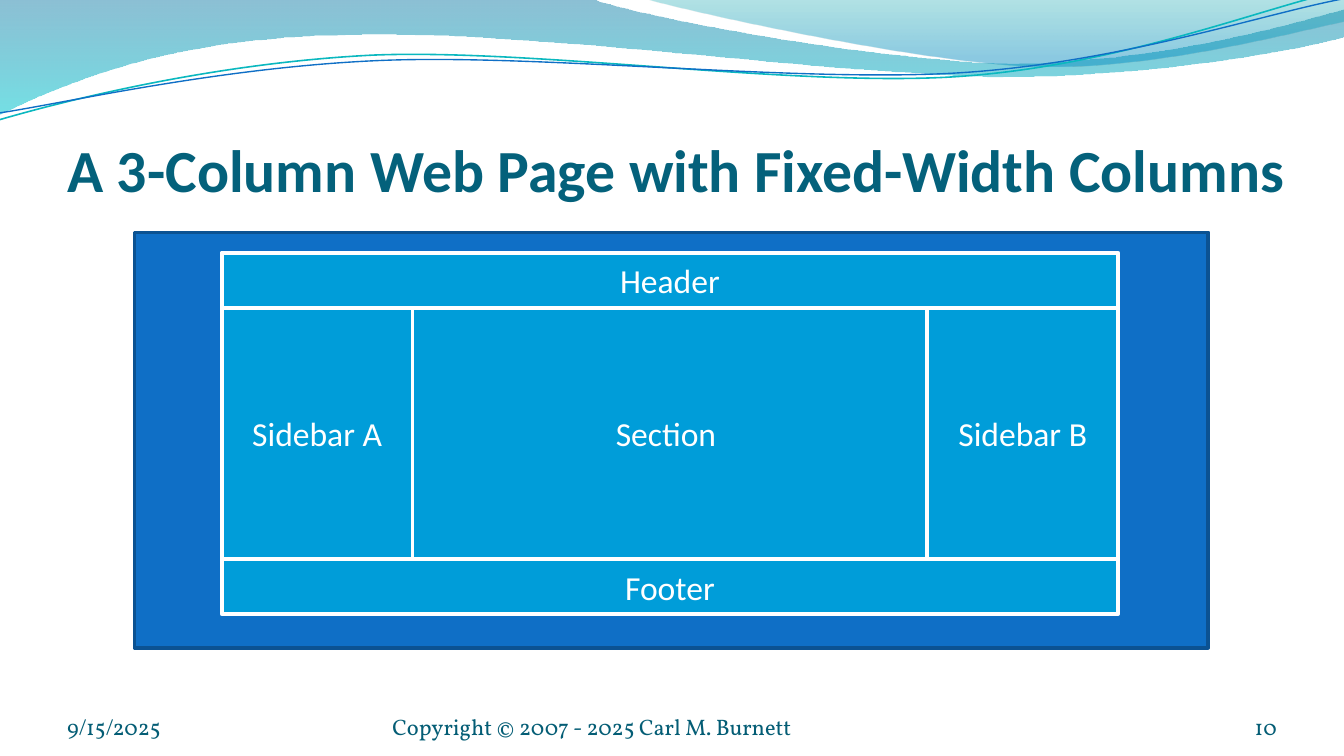
from itertools import accumulate
from math import cos, radians, sin

from pptx import Presentation
from pptx.dml.color import RGBColor
from pptx.enum.shapes import MSO_SHAPE
from pptx.enum.text import MSO_ANCHOR, PP_ALIGN
from pptx.oxml.ns import qn
from pptx.util import Inches, Pt

RECTANGLE = MSO_SHAPE.RECTANGLE
BOTTOM, MIDDLE = MSO_ANCHOR.BOTTOM, MSO_ANCHOR.MIDDLE
LEFT, CENTER, RIGHT = PP_ALIGN.LEFT, PP_ALIGN.CENTER, PP_ALIGN.RIGHT

COLORS = {
    "title": "04617B",
    "footer": "045D75",
    "page": "0F6FC6",
    "page_border": "0B5292",
    "block": "009DD9",
    "white": "FFFFFF",
    "deep_teal": "0074A1",
    "aqua": "00C6CF",
    "sea_green": "00A1A9",
    "sky": "008BBF",
    "teal_line": "0AB8BF",
}

LINE_TILT = 2.7
COLUMN_WIDTHS = (1.42, 3.83, 1.42)
ROW_HEIGHTS = (0.41, 1.87, 0.41)
GRID_LEFT, GRID_TOP = 1.65, 1.88
SECTION_OVERLAP = 0.06

WAVE_BANDS = (
    (
        [(0, 0), (4.4, -0.01), (4.76, 0.13, 6.64, 0.47, 7.58, 0.47),
         (8.53, 0.47, 9.58, 0.19, 10, 0.07), (10.01, 0.27),
         (9.83, 0.33, 8.7, 0.57, 7.46, 0.57),
         (6.22, 0.56, 3.82, 0.21, 2.57, 0.26),
         (1.29, 0.27, 0.46, 0.62, -0.01, 0.85), (0, 0)],
        [(0, "deep_teal", 45), (1, "aqua", 55)],
    ),
    (
        [(4.79, -0.01), (5.09, 0.08, 6.82, 0.46, 7.69, 0.49),
         (8.56, 0.52, 9.61, 0.24, 10, 0.16), (10, 0), (4.79, -0.01)],
        [(0, "sea_green", 30), (0.8, "sky", 45)],
    ),
)

WAVE_LINES = (
    ([(0, 0.89), (0.48, 0.75, 1.58, 0.47, 2.77, 0.41),
      (3.96, 0.36, 5.92, 0.65, 7.12, 0.57),
      (8.33, 0.49, 9.39, 0.06, 9.98, -0.07)], (4.99, 0.43), "teal_line", 0.85),
    ([(0, 0.84), (0.47, 0.77, 1.64, 0.5, 2.83, 0.45),
      (4.03, 0.4, 5.97, 0.62, 7.17, 0.54),
      (8.36, 0.46, 9.41, 0.1, 10, -0.01)], (5, 0.44), "page", 0.75),
)


def rgb(name):
    return RGBColor.from_string(COLORS[name])


def turn(point, center, degrees):
    angle = radians(degrees)
    x, y = point[0] - center[0], point[1] - center[1]
    return (center[0] + x * cos(angle) - y * sin(angle),
            center[1] + x * sin(angle) + y * cos(angle))


def add_wave(slide, outline, center=(0, 0), tilt=0):
    points = [turn(segment[i:i + 2], center, tilt)
              for segment in outline for i in range(0, len(segment), 2)]
    vertices = [(Inches(x), Inches(y)) for x, y in points]
    builder = slide.shapes.build_freeform(*vertices[0])
    builder.add_line_segments(vertices[1:], close=outline[0] == outline[-1])
    shape = builder.convert_to_shape()
    shape.shadow.inherit = False
    shape.rotation = -tilt
    bend_curves(shape, outline[1:])
    return shape


def bend_curves(shape, segments):
    steps = iter(list(shape._element.spPr.iter(qn("a:lnTo"))))
    for segment in segments:
        controls = [next(steps) for _ in range(len(segment) // 2)]
        if len(controls) == 3:
            curve = controls[0].makeelement(qn("a:cubicBezTo"), {})
            controls[0].addprevious(curve)
            for control in controls:
                curve.append(control[0])
                control.getparent().remove(control)


def add_wave_band(slide, outline, stops):
    shape = add_wave(slide, outline)
    shape.fill.gradient()
    shape.fill.gradient_angle = 270
    for stop, (position, color, opacity) in zip(shape.fill.gradient_stops, stops):
        stop.position = position
        stop.color.rgb = rgb(color)
    color_elements = list(shape._element.spPr.iter(qn("a:srgbClr")))
    for element, (position, color, opacity) in zip(color_elements, stops):
        alpha = element.makeelement(qn("a:alpha"), {"val": str(opacity * 1000)})
        element.append(alpha)
    shape.line.fill.background()


def add_wave_line(slide, outline, center, color, width):
    shape = add_wave(slide, outline, center, LINE_TILT)
    shape.fill.background()
    shape.line.color.rgb = rgb(color)
    shape.line.width = Pt(width)


def write_text(shape, text, size, font, color, alignment, anchor, bold=False):
    frame = shape.text_frame
    frame.word_wrap = True
    frame.vertical_anchor = anchor
    paragraph = frame.paragraphs[0]
    paragraph.alignment = alignment
    run = paragraph.add_run()
    run.text = text
    run.font.size = Pt(size)
    run.font.name = font
    run.font.bold = bold
    run.font.color.rgb = rgb(color)


def add_label(slide, box, text, size, font, color, alignment=LEFT, bold=False, top_inset=0):
    shape = slide.shapes.add_textbox(*map(Inches, box))
    frame = shape.text_frame
    frame.margin_left = frame.margin_right = frame.margin_bottom = 0
    frame.margin_top = Inches(top_inset)
    write_text(shape, text, size, font, color, alignment, BOTTOM, bold)


def add_rectangle(slide, box, fill, border):
    shape = slide.shapes.add_shape(RECTANGLE, *map(Inches, box))
    shape.shadow.inherit = False
    shape.fill.solid()
    shape.fill.fore_color.rgb = rgb(fill)
    shape.line.color.rgb = rgb(border)
    shape.line.width = Pt(2)
    return shape


def add_block(slide, text, column, row, span=1, overlap=0):
    lefts = list(accumulate(COLUMN_WIDTHS, initial=GRID_LEFT))
    tops = list(accumulate(ROW_HEIGHTS, initial=GRID_TOP))
    left = lefts[column] - overlap
    box = (left, tops[row], lefts[column + span] - left, ROW_HEIGHTS[row])
    shape = add_rectangle(slide, box, "block", "white")
    write_text(shape, text, 18, "Calibri", "white", CENTER, MIDDLE)


def main():
    presentation = Presentation()
    presentation.slide_width = Inches(10)
    presentation.slide_height = Inches(10) * 9 // 16
    slide = presentation.slides.add_slide(presentation.slide_layouts[6])

    for outline, stops in WAVE_BANDS:
        add_wave_band(slide, outline, stops)
    for outline, center, color, width in WAVE_LINES:
        add_wave_line(slide, outline, center, color, width)

    add_label(slide, (0.5, 0.58, 9.08, 0.94), "A 3-Column Web Page with Fixed-Width Columns",
              32, "Calibri", "title", bold=True, top_inset=0.05)

    add_rectangle(slide, (1, 1.73, 7.99, 3.09), "page", "page_border")
    add_block(slide, "Header", 0, 0, span=3)
    add_block(slide, "Section", 1, 1, overlap=SECTION_OVERLAP)
    add_block(slide, "Footer", 0, 2, span=3)
    add_block(slide, "Sidebar B", 2, 1)
    add_block(slide, "Sidebar A", 0, 1)

    for left, width, text, alignment in (
        (0.5, 2.33, "9/15/2025", LEFT),
        (2.92, 3.67, "Copyright © 2007 - 2025 Carl M. Burnett", LEFT),
        (8.67, 0.83, "10", RIGHT),
    ):
        add_label(slide, (left, 5.21, width, 0.3), text, 12, "Vollkorn", "footer", alignment)

    presentation.save("out.pptx")


if __name__ == "__main__":
    main()
